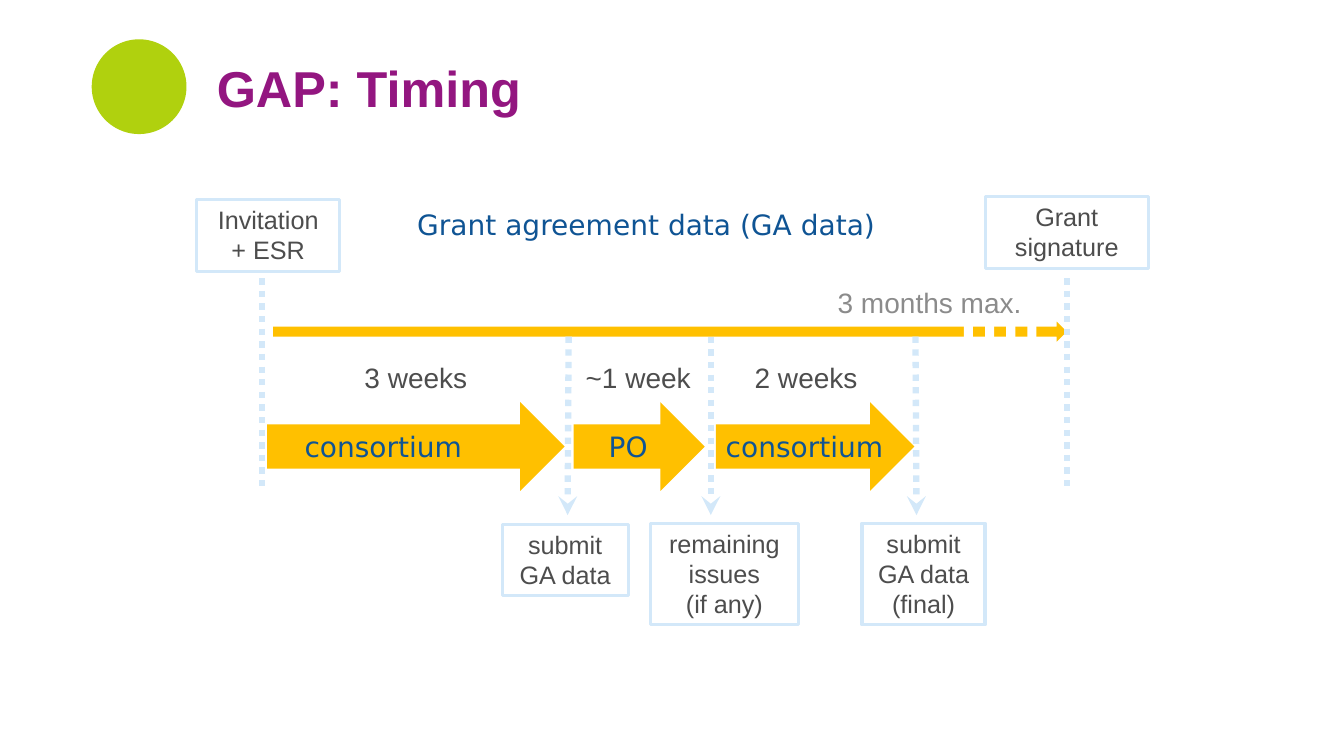
from lxml import etree
from pptx import Presentation
from pptx.dml.color import RGBColor
from pptx.enum.dml import MSO_LINE
from pptx.enum.shapes import MSO_CONNECTOR, MSO_SHAPE
from pptx.enum.text import MSO_ANCHOR, PP_ALIGN
from pptx.oxml.ns import qn
from pptx.util import Inches, Pt

PURPLE, LIME, AMBER, PALE_BLUE = "931680", "B0D10E", "FFC000", "D3E8F9"
NAVY, DARK_GREY, MID_GREY, WHITE = "0F5494", "4D4D4D", "8B8B8B", "FFFFFF"
LEFT, CENTER = PP_ALIGN.LEFT, PP_ALIGN.CENTER

prs = Presentation()
prs.slide_width, prs.slide_height = Inches(13.33), Inches(7.5)
slide = prs.slides.add_slide(prs.slide_layouts[5])
shapes = slide.shapes


def write(frame, lines, size, font, color, align=LEFT, bold=False):
    """Fill a text frame with one single-run paragraph per line."""
    for i, line in enumerate(lines):
        paragraph = frame.paragraphs[0] if i == 0 else frame.add_paragraph()
        paragraph.alignment = align
        run = paragraph.add_run()
        run.text = line
        run.font.size, run.font.name, run.font.bold = Pt(size), font, bold
        run.font.color.rgb = RGBColor.from_string(color)


def add_block(preset, left, top, width, height, fill=None, outline=None):
    block = shapes.add_shape(preset, Inches(left), Inches(top), Inches(width), Inches(height))
    block.shadow.inherit = False
    if fill:
        block.fill.solid()
        block.fill.fore_color.rgb = RGBColor.from_string(fill)
    else:
        block.fill.background()
    if outline:
        block.line.color.rgb = RGBColor.from_string(outline)
        block.line.width = Pt(2.25)
    else:
        block.line.fill.background()
    return block


# Title
title = shapes.title
title.left, title.top = Inches(2.05), Inches(0.56)
title.width, title.height = Inches(10.59), Inches(0.62)
heading = title.text_frame
heading.word_wrap = True
heading.vertical_anchor = MSO_ANCHOR.BOTTOM
heading.margin_bottom = 0
write(heading, ["GAP: Timing"], 36, "Arial", PURPLE, bold=True)
heading.paragraphs[0].line_spacing = 0.9
add_block(MSO_SHAPE.OVAL, 0.91, 0.39, 0.94, 0.94, fill=LIME)

# Overall time bar, cut into dashes near its end
add_block(MSO_SHAPE.RIGHT_ARROW, 2.71, 3.19, 7.87, 0.2, fill=AMBER)
for gap in range(4):
    add_block(MSO_SHAPE.RECTANGLE, 9.56 + 0.21 * gap, 3.12, 0.09, 0.3, fill=WHITE)

# Dotted milestone lines: x and y at start, x and y at end, arrowhead
for x1, y1, x2, y2, has_head in [
    (2.6, 2.76, 2.6, 4.87, False),
    (10.58, 2.76, 10.58, 4.87, False),
    (5.64, 3.34, 5.63, 5.11, True),
    (7.05, 3.34, 7.05, 5.11, True),
    (9.08, 3.34, 9.09, 5.11, True),
]:
    milestone = shapes.add_connector(
        MSO_CONNECTOR.STRAIGHT, Inches(x1), Inches(y1), Inches(x2), Inches(y2))
    milestone.line.color.rgb = RGBColor.from_string(PALE_BLUE)
    milestone.line.width = Pt(4.5)
    milestone.line.dash_style = MSO_LINE.ROUND_DOT
    if has_head:
        etree.SubElement(milestone.line._get_or_add_ln(), qn("a:tailEnd"), type="stealth")
    etree.SubElement(milestone._element.spPr, qn("a:effectLst"))

# Milestone boxes
for lines, left, top, width, height in [
    (["Invitation", "+ ESR"], 1.95, 1.98, 1.42, 0.71),
    (["Grant", "signature"], 9.77, 1.95, 1.62, 0.71),
    (["submit", "GA data"], 4.98, 5.2, 1.25, 0.71),
    (["remaining", "issues", "(if any)"], 6.45, 5.19, 1.47, 1.01),
    (["submit", "GA data", "(final)"], 8.55, 5.19, 1.22, 1.01),
]:
    box = add_block(MSO_SHAPE.RECTANGLE, left, top, width, height, outline=PALE_BLUE)
    box.text_frame.word_wrap = False
    box.text_frame.vertical_anchor = MSO_ANCHOR.TOP
    write(box.text_frame, lines, 18, "Arial", DARK_GREY, CENTER)

# Phase arrows
for actor, left, width, align, indent in [
    ("consortium", 2.65, 2.95, LEFT, 0.37),
    ("PO", 5.69, 1.3, CENTER, 0.1),
    ("consortium", 7.1, 1.97, LEFT, 0.1),
]:
    phase = add_block(MSO_SHAPE.RIGHT_ARROW, left, 3.99, width, 0.88, fill=AMBER)
    phase.text_frame.word_wrap = False
    phase.text_frame.vertical_anchor = MSO_ANCHOR.MIDDLE
    phase.text_frame.margin_left = Inches(indent)
    write(phase.text_frame, [actor], 20, "DejaVu Sans", NAVY, align)

# Free labels
for label, left, top, width, font, color, align in [
    ("3 months max.", 8.21, 2.78, 2.34, "Arial", MID_GREY, LEFT),
    ("3 weeks", 3.45, 3.53, 1.35, "Arial", DARK_GREY, CENTER),
    ("~1 week", 5.61, 3.53, 1.44, "Arial", DARK_GREY, CENTER),
    ("2 weeks", 7.32, 3.53, 1.35, "Arial", DARK_GREY, CENTER),
    ("Grant agreement data (GA data)", 4.04, 2.01, 5.9, "DejaVu Sans", NAVY, LEFT),
]:
    caption = shapes.add_textbox(Inches(left), Inches(top), Inches(width), Inches(0.44))
    caption.text_frame.word_wrap = True
    write(caption.text_frame, [label], 20, font, color, align)

prs.save("out.pptx")
